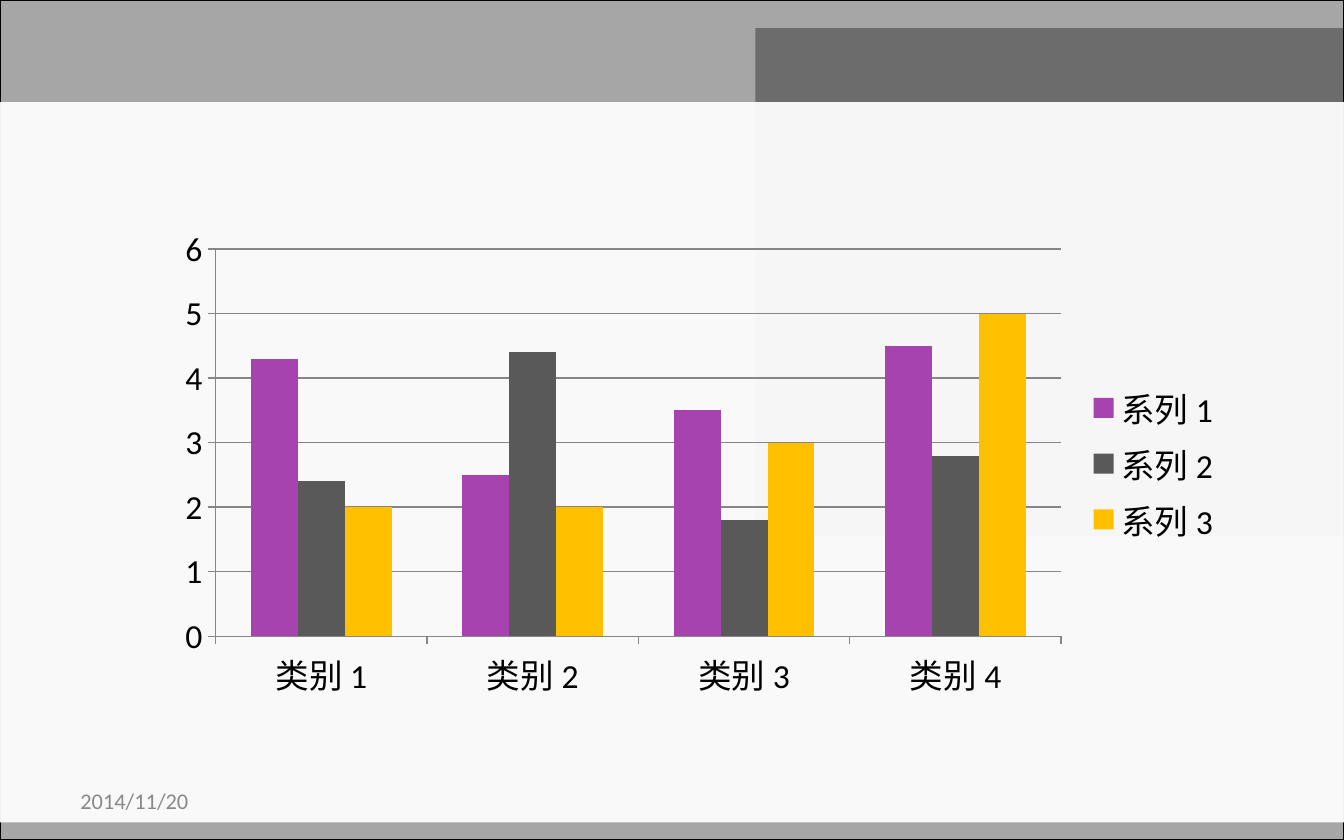
from dataclasses import dataclass

from lxml import etree
from pptx import Presentation
from pptx.chart.data import CategoryChartData
from pptx.dml.color import RGBColor
from pptx.enum import chart as charts, shapes, text
from pptx.oxml.ns import qn
from pptx.util import Inches, Pt


@dataclass(frozen=True)
class Theme:
    font: str = "Calibri"
    black: str = "000000"
    white: str = "FFFFFF"
    date_grey: str = "898989"
    axis_grey: str = "868686"
    chart_size: int = 18
    date_size: int = 12
    line_width: float = 0.75


@dataclass(frozen=True)
class Panel:
    left: float
    top: float
    width: float
    height: float
    color: str
    opacity: int
    outlined: bool = False


@dataclass(frozen=True)
class Series:
    name: str
    values: tuple[float, ...]
    color: str


THEME = Theme()
PANELS = (
    Panel(0, 0, 10, 6.25, THEME.black, 35, outlined=True),
    Panel(5.62, 0.21, 4.38, 3.78, THEME.black, 35),
    Panel(0, 0.76, 10, 5.36, THEME.white, 94),
)
CATEGORIES = [f"类别 {number}" for number in range(1, 5)]
SERIES = (
    Series("系列 1", (4.3, 2.5, 3.5, 4.5), "A743AF"),
    Series("系列 2", (2.4, 4.4, 1.8, 2.8), "595959"),
    Series("系列 3", (2, 2, 3, 5), "FFC000"),
)


def color_of(value: str) -> RGBColor:
    return RGBColor.from_string(value)


def paint(fill, color: str) -> None:
    fill.solid()
    fill.fore_color.rgb = color_of(color)


def format_line(line, color: str) -> None:
    line.color.rgb = color_of(color)
    line.width = Pt(THEME.line_width)


def format_font(font, *, size: int, color: str) -> None:
    font.name = THEME.font
    font.size = Pt(size)
    font.color.rgb = color_of(color)


def draw_panel(page, panel: Panel) -> None:
    box = page.shapes.add_shape(
        shapes.MSO_SHAPE.RECTANGLE,
        Inches(panel.left), Inches(panel.top), Inches(panel.width), Inches(panel.height),
    )
    box.shadow.inherit = False
    paint(box.fill, panel.color)
    solid = box.element.spPr.find(qn("a:solidFill"))
    etree.SubElement(solid[0], qn("a:alpha"), val=str(panel.opacity * 1000))
    if panel.outlined:
        format_line(box.line, THEME.black)
    else:
        box.line.fill.background()


def draw_chart(page, left: float, top: float, width: float, height: float) -> None:
    data = CategoryChartData()
    data.categories = CATEGORIES
    for series in SERIES:
        data.add_series(series.name, series.values)
    chart = page.shapes.add_chart(
        charts.XL_CHART_TYPE.COLUMN_CLUSTERED,
        Inches(left), Inches(top), Inches(width), Inches(height), data,
    ).chart
    format_font(chart.font, size=THEME.chart_size, color=THEME.black)
    chart.has_title = False
    chart.has_legend = True
    chart.legend.position = charts.XL_LEGEND_POSITION.RIGHT
    chart.legend.include_in_layout = False

    plot = chart.plots[0]
    plot.vary_by_categories = False
    plot.gap_width = 150
    plot.overlap = 0
    for drawn, series in zip(plot.series, SERIES):
        paint(drawn.format.fill, series.color)

    for axis in (chart.category_axis, chart.value_axis):
        axis.major_tick_mark = charts.XL_TICK_MARK.OUTSIDE
        axis.minor_tick_mark = charts.XL_TICK_MARK.NONE
        format_line(axis.format.line, THEME.axis_grey)
    values = chart.value_axis
    values.minimum_scale, values.maximum_scale, values.major_unit = 0, 6, 1
    values.has_major_gridlines = True
    format_line(values.major_gridlines.format.line, THEME.axis_grey)


def add_text(page, words: str, *, left: float, top: float, width: float,
             height: float, size: int, color: str) -> None:
    box = page.shapes.add_textbox(Inches(left), Inches(top), Inches(width), Inches(height))
    frame = box.text_frame
    frame.word_wrap = True
    frame.vertical_anchor = text.MSO_ANCHOR.MIDDLE
    span = frame.paragraphs[0].add_run()
    span.text = words
    format_font(span.font, size=size, color=color)


def main() -> None:
    deck = Presentation()
    deck.slide_width, deck.slide_height = Inches(10), Inches(6.25)
    page = deck.slides.add_slide(deck.slide_layouts[6])
    paint(page.background.fill, THEME.white)
    for panel in PANELS:
        draw_panel(page, panel)
    draw_chart(page, 1.22, 1.63, 7.97, 3.64)
    add_text(page, "2014/11/20", left=0.5, top=5.79, width=2.33, height=0.33,
             size=THEME.date_size, color=THEME.date_grey)
    deck.save("out.pptx")


if __name__ == "__main__":
    main()
